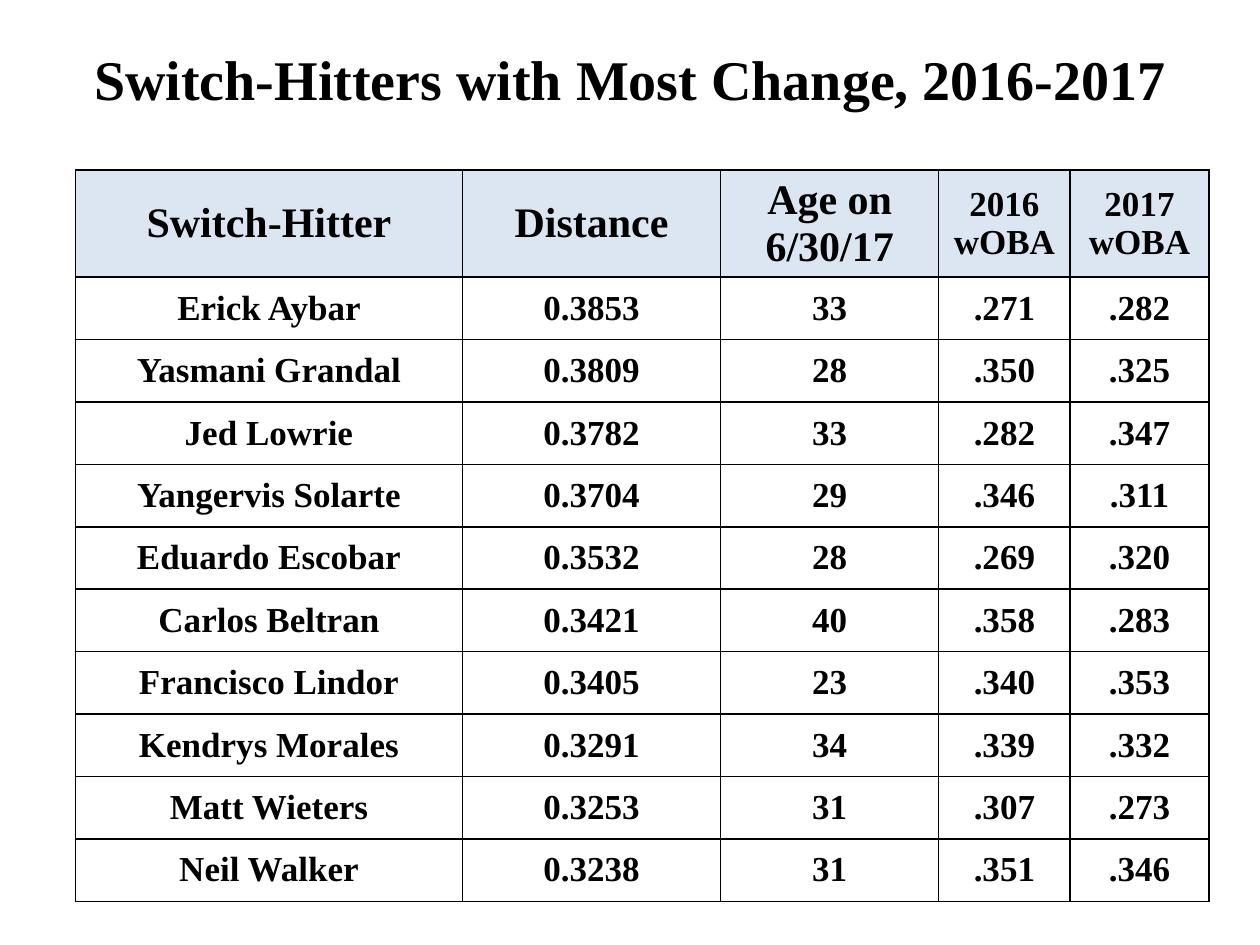
from dataclasses import dataclass
from lxml.etree import SubElement
from pptx import Presentation
from pptx.dml.color import RGBColor
from pptx.enum.text import MSO_ANCHOR, MSO_AUTO_SIZE, PP_ALIGN
from pptx.oxml.ns import qn
from pptx.slide import Slide
from pptx.table import Table, _Cell
from pptx.text.text import TextFrame
from pptx.util import Pt

FONT = "Times New Roman"
BLACK = "000000"
PALE = "DCE6F2"


@dataclass
class Column:
    head: str
    width: float
    size: int


@dataclass
class Hitter:
    name: str
    dist: str
    age: str
    old: str
    new: str

    def texts(self) -> list[str]:
        return [self.name, self.dist, self.age, self.old, self.new]


COLUMNS = [
    Column("Switch-Hitter", 221.04, 24),
    Column("Distance", 147.6, 24),
    Column("Age on 6/30/17", 124.56, 24),
    Column("2016 wOBA", 75.2, 20),
    Column("2017 wOBA", 79.2, 20),
]

HITTERS = [
    Hitter("Erick Aybar", "0.3853", "33", ".271", ".282"),
    Hitter("Yasmani Grandal", "0.3809", "28", ".350", ".325"),
    Hitter("Jed Lowrie", "0.3782", "33", ".282", ".347"),
    Hitter("Yangervis Solarte", "0.3704", "29", ".346", ".311"),
    Hitter("Eduardo Escobar", "0.3532", "28", ".269", ".320"),
    Hitter("Carlos Beltran", "0.3421", "40", ".358", ".283"),
    Hitter("Francisco Lindor", "0.3405", "23", ".340", ".353"),
    Hitter("Kendrys Morales", "0.3291", "34", ".339", ".332"),
    Hitter("Matt Wieters", "0.3253", "31", ".307", ".273"),
    Hitter("Neil Walker", "0.3238", "31", ".351", ".346"),
]


def color(code: str) -> RGBColor:
    return RGBColor.from_string(code)


def write(frame: TextFrame, text: str, size: int) -> None:
    para = frame.paragraphs[0]
    para.alignment = PP_ALIGN.CENTER
    run = para.add_run()
    run.text = text
    run.font.name = FONT
    run.font.size = Pt(size)
    run.font.bold = True
    run.font.color.rgb = color(BLACK)


def border(cell: _Cell) -> None:
    props = cell._tc.get_or_add_tcPr()
    for side in ("lnL", "lnR", "lnT", "lnB"):
        line = SubElement(props, qn(f"a:{side}"), w=str(Pt(1)))
        fill = SubElement(line, qn("a:solidFill"))
        SubElement(fill, qn("a:srgbClr"), val=BLACK)


def draw_cell(cell: _Cell, text: str, size: int, fill: str | None = None) -> None:
    border(cell)
    if fill:
        cell.fill.solid()
        cell.fill.fore_color.rgb = color(fill)
    else:
        cell.fill.background()
    cell.vertical_anchor = MSO_ANCHOR.MIDDLE
    write(cell.text_frame, text, size)


def draw_title(slide: Slide, text: str) -> None:
    title = slide.shapes.title
    title.left, title.top = Pt(43.9), Pt(21.6)
    title.width, title.height = Pt(632.9), Pt(46.1)
    frame = title.text_frame
    frame.word_wrap = False
    frame.auto_size = MSO_AUTO_SIZE.NONE
    frame.vertical_anchor = MSO_ANCHOR.MIDDLE
    write(frame, text, 32)


def draw_table(slide: Slide) -> Table:
    head, step = 61.2, 35.66
    width = sum(col.width for col in COLUMNS)
    height = head + step * len(HITTERS)
    table = slide.shapes.add_table(
        len(HITTERS) + 1, len(COLUMNS), Pt(43.2), Pt(97.2), Pt(width), Pt(height)
    ).table
    table.horz_banding = False
    for i, row in enumerate(table.rows):
        row.height = Pt(step if i else head)
    for i, col in enumerate(COLUMNS):
        table.columns[i].width = Pt(col.width)
        draw_cell(table.cell(0, i), col.head, col.size, PALE)
    for i, hitter in enumerate(HITTERS, 1):
        for j, text in enumerate(hitter.texts()):
            draw_cell(table.cell(i, j), text, 20)
    return table


def main() -> None:
    deck = Presentation()
    deck.slide_width, deck.slide_height = Pt(720), Pt(540)
    slide = deck.slides.add_slide(deck.slide_layouts[5])
    draw_title(slide, "Switch-Hitters with Most Change, 2016-2017")
    draw_table(slide)
    deck.save("out.pptx")


if __name__ == "__main__":
    main()
